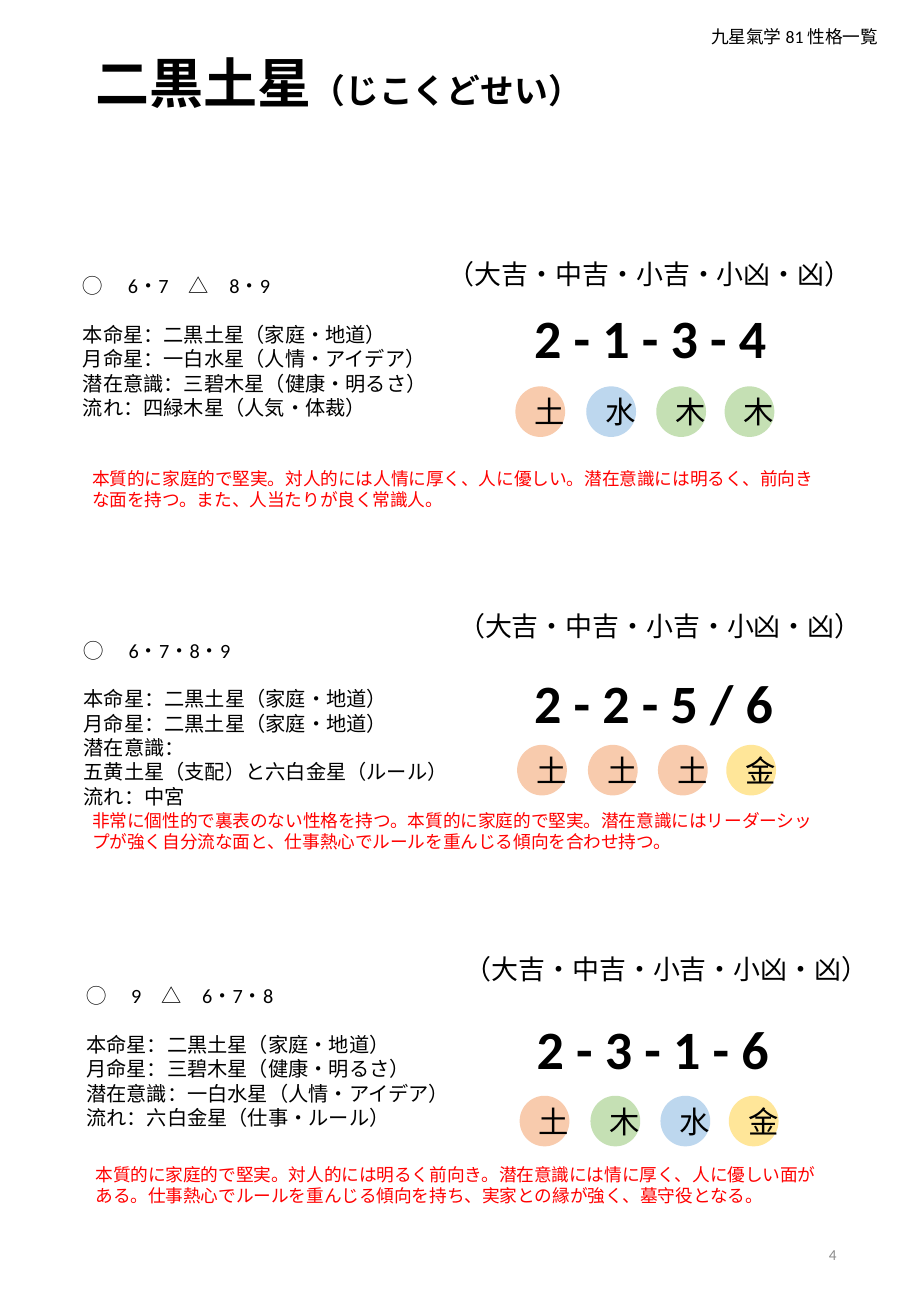
from pptx import Presentation
from pptx.dml.color import RGBColor
from pptx.enum.shapes import MSO_SHAPE
from pptx.enum.text import MSO_ANCHOR, MSO_AUTO_SIZE, PP_ALIGN
from pptx.util import Pt

COLORS = {
    "ink": "000000", "note": "FF0000", "page": "8C8C8C",
    "土": "F8CBAD", "水": "BDD7EE", "木": "C5E0B4", "金": "FFE699",
}
FONT = "Calibri"
RATING = "（大吉・中吉・小吉・小凶・凶）"
CIRCLE_OFFSETS = (0, 42, 83.5, 124)

SECTIONS = [
    {
        "profile_at": (42, 158.5), "rating_at": (258.5, 149), "code_at": (309.5, 177),
        "circles_at": (305.5, 229), "note_at": (47.5, 273.5),
        "code": "2 - 1 - 3 - 4", "elements": "土水木木",
        "profile": ["◯　 6・7　△　8・9", "本命星：二黒土星（家庭・地道）",
                    "月命星：一白水星（人情・アイデア）",
                    "潜在意識：三碧木星（健康・明るさ）", "流れ：四緑木星（人気・体裁）"],
        "note": "本質的に家庭的で堅実。対人的には人情に厚く、人に優しい。"
                "潜在意識には明るく、前向きな面を持つ。また、人当たりが良く常識人。",
    },
    {
        "profile_at": (42.5, 374.5), "rating_at": (264.5, 358), "code_at": (309.5, 393),
        "circles_at": (306.5, 441.5), "note_at": (47.5, 476.5),
        "code": "2 - 2 - 5 / 6", "elements": "土土土金",
        "profile": ["◯　 6・7・8・9", "本命星：二黒土星（家庭・地道）",
                    "月命星：二黒土星（家庭・地道）", "潜在意識：",
                    "五黄土星（支配）と六白金星（ルール）", "流れ：中宮"],
        "note": "非常に個性的で裏表のない性格を持つ。本質的に家庭的で堅実。"
                "潜在意識にはリーダーシップが強く自分流な面と、"
                "仕事熱心でルールを重んじる傾向を合わせ持つ。",
    },
    {
        "profile_at": (44, 579.5), "rating_at": (268.5, 561), "code_at": (311, 598.5),
        "circles_at": (308, 649.5), "note_at": (49.5, 686),
        "code": "2 - 3 - 1 - 6", "elements": "土木水金",
        "profile": ["◯　 9　△　6・7・8", "本命星：二黒土星（家庭・地道）",
                    "月命星：三碧木星（健康・明るさ）",
                    "潜在意識：一白水星（人情・アイデア）", "流れ：六白金星（仕事・ルール）"],
        "note": "本質的に家庭的で堅実。対人的には明るく前向き。"
                "潜在意識には情に厚く、人に優しい面がある。"
                "仕事熱心でルールを重んじる傾向を持ち、実家との縁が強く、墓守役となる。",
    },
]


class StarPage:
    def __init__(self, slide):
        self.slide = slide

    def style(self, run, size, color="ink", bold=False):
        run.font.name = FONT
        run.font.size = Pt(size)
        run.font.bold = bold
        run.font.color.rgb = RGBColor.from_string(COLORS[color])

    def text(self, at, extent, content, size, color="ink", bold=False, wrap=True):
        box = self.slide.shapes.add_textbox(*map(Pt, at + extent))
        frame = box.text_frame
        frame.text = content
        frame.word_wrap = wrap
        frame.auto_size = MSO_AUTO_SIZE.SHAPE_TO_FIT_TEXT
        for paragraph in frame.paragraphs:
            for run in paragraph.runs:
                self.style(run, size, color, bold)
        return frame

    def title(self, star, reading):
        frame = self.text((49.5, 26), (490.5, 46), star, 32, bold=True)
        run = frame.paragraphs[0].add_run()
        run.text = reading
        self.style(run, 20, bold=True)

    def page_number(self, number):
        frame = self.text((381.5, 723), (121.5, 41.5), number, 9, "page")
        frame.auto_size = MSO_AUTO_SIZE.NONE
        frame.vertical_anchor = MSO_ANCHOR.MIDDLE
        frame.paragraphs[0].alignment = PP_ALIGN.RIGHT

    def profile(self, at, lines):
        frame = self.text(at, (237, 109), "\n".join(lines), 12)
        frame.paragraphs[0].space_after = Pt(14.5)

    def element(self, at, name):
        circle = self.slide.shapes.add_shape(MSO_SHAPE.OVAL, *map(Pt, at + (29.5, 30)))
        circle.shadow.inherit = False
        circle.fill.solid()
        circle.fill.fore_color.rgb = RGBColor.from_string(COLORS[name])
        circle.line.fill.background()
        frame = circle.text_frame
        frame.text = name
        frame.vertical_anchor = MSO_ANCHOR.MIDDLE
        frame.paragraphs[0].alignment = PP_ALIGN.CENTER
        self.style(frame.paragraphs[0].runs[0], 18)

    def section(self, section):
        self.profile(section["profile_at"], section["profile"])
        self.text(section["code_at"], (181.5, 46), section["code"], 32, bold=True)
        left, top = section["circles_at"]
        for offset, name in zip(CIRCLE_OFFSETS, section["elements"]):
            self.element((left + offset, top), name)
        self.text(section["note_at"], (450.5, 32.5), section["note"], 10.5, "note")
        self.text(section["rating_at"], (257, 26.5), RATING, 16, wrap=False)


def main():
    deck = Presentation()
    deck.slide_width, deck.slide_height = Pt(540), Pt(780)
    page = StarPage(deck.slides.add_slide(deck.slide_layouts[6]))
    page.title("二黒土星", "（じこくどせい）")
    page.text((414.5, 12), (115, 20), "九星氣学 81 性格一覧", 10.5)
    page.page_number("4")
    for section in SECTIONS:
        page.section(section)
    deck.save("out.pptx")


if __name__ == "__main__":
    main()
